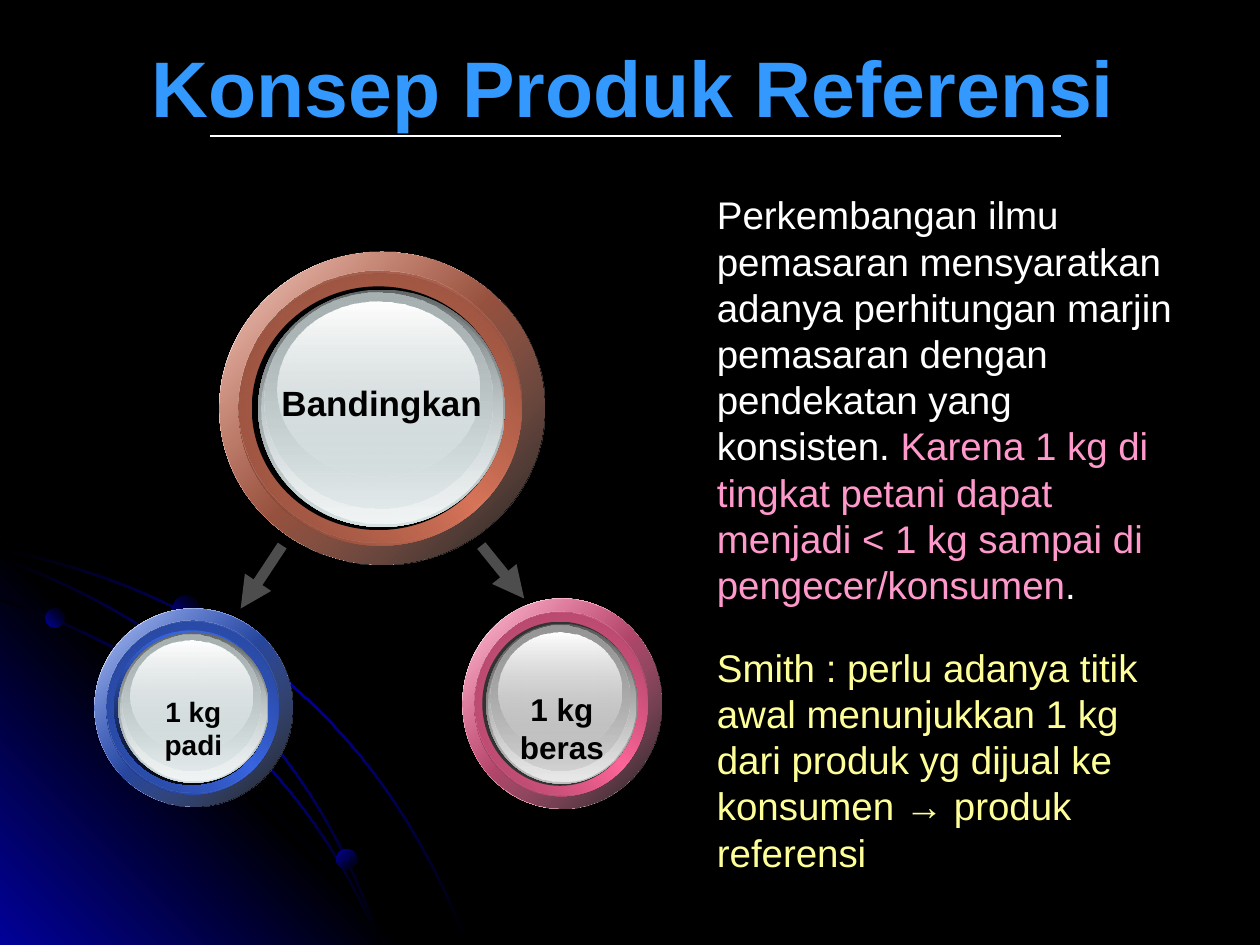
"""Build the slide on the reference product concept."""
from pptx import Presentation
from pptx.dml.color import RGBColor
from pptx.enum.shapes import MSO_CONNECTOR, MSO_SHAPE
from pptx.enum.text import MSO_ANCHOR, PP_ALIGN
from pptx.oxml import parse_xml
from pptx.oxml.ns import nsdecls, qn
from pptx.util import Inches, Pt

OVAL = MSO_SHAPE.OVAL
STRAIGHT = MSO_CONNECTOR.STRAIGHT
CENTER, LEFT = PP_ALIGN.CENTER, PP_ALIGN.LEFT
TOP, MIDDLE = MSO_ANCHOR.TOP, MSO_ANCHOR.MIDDLE

BLACK = RGBColor(0, 0, 0)
WHITE = RGBColor(255, 255, 255)
NAVY = RGBColor(0x01, 0x01, 0x99)
SKY = RGBColor(0x33, 0x99, 0xFF)
PINK = RGBColor(0xFF, 0x99, 0xCC)
YELLOW = RGBColor(0xFF, 0xFF, 0x99)
COPPER = RGBColor(0xD8, 0x75, 0x5A)
ROSE = RGBColor(0xFF, 0x66, 0x99)
BLUE = RGBColor(0x39, 0x65, 0xE1)
ICE = RGBColor(0xD6, 0xE1, 0xE2)
SILVER = RGBColor(0xC0, 0xC0, 0xC0)
CHARCOAL = RGBColor(0x33, 0x33, 0x33)
GRAY = RGBColor(0x4D, 0x4D, 0x4D)
INK = RGBColor(0x03, 0x06, 0x0D)

FONT = "Arial"
PAGE_WIDTH, PAGE_HEIGHT = 10, 7.5
TRAIL_STEPS, TRAIL_THICKNESS = 24, 0.02

TITLE = "Konsep Produk Referensi"
BODY = [
    [("Perkembangan ilmu pemasaran mensyaratkan adanya perhitungan marjin "
      "pemasaran dengan pendekatan yang konsisten. ", WHITE),
     ("Karena 1 kg di tingkat petani dapat menjadi < 1 kg sampai di "
      "pengecer/konsumen", PINK),
     (".", WHITE)],
    [("Smith : perlu adanya titik awal menunjukkan 1 kg dari produk yg dijual "
      "ke konsumen → produk referensi", YELLOW)],
]
ORBS = [
    {"lines": ["Bandingkan"], "size": 20, "label_top": 2.98,
     "bounds": (1.74, 2, 2.58, 2.48), "rim": COPPER, "glass": ICE,
     "core": (BLACK, BLACK)},
    {"lines": ["1 kg", "beras"], "size": 18, "label_top": 5.43,
     "bounds": (3.67, 4.75, 1.58, 1.67), "rim": ROSE, "glass": SILVER,
     "core": (CHARCOAL, CHARCOAL)},
    {"lines": ["1 kg", "padi"], "size": 16, "label_top": 5.46,
     "bounds": (0.75, 4.83, 1.57, 1.57), "rim": BLUE, "glass": ICE,
     "core": (BLUE, INK)},
]
ARROWS = [(2.24, 4.33, 1.91, 4.83), (3.82, 4.33, 4.16, 4.75)]
TITLE_RULE = (1.67, 1.08, 8.42, 1.08)

GLOW_CORNER = [(0, 4.27), (3.22, 7.5), (0, 7.5)]
OUTER_TRAIL = [(0, 4.35), (2.72, 4.89), (3.72, 7.5)]
INNER_TRAIL = [(0, 4.75), (2.18, 5.46), (3.03, 7.5)]
MIDDLE_TRAIL = [(0, 4.42), (2.3, 5.24), (3.03, 7.5)]
BEADS = [(0.36, 4.83, 0.15, 315), (2.67, 6.74, 0.16, 45), (1.37, 4.73, 0.21, 315)]


def blend(color, target, share):
    """Move a colour towards a target by the given share."""
    return RGBColor(*(round(a + (b - a) * share) for a, b in zip(color, target)))


def orb_layers(rim, glass, core):
    """List each layer as left, top, width, height shares, gradient stops and angle."""
    shadow = blend(rim, BLACK, 0.46)
    outer_edge = (0, 0, 1, 1), [(0, WHITE), (50, rim), (100, WHITE)], 45
    outer_shade = (0, 0, 1, 1), [(0, rim, 32), (100, BLACK, 90)], 45
    inner_edge = (0.06, 0.07, 0.87, 0.87), [(0, shadow), (50, rim), (100, shadow)], 315
    inner_shade = ((0.06, 0.06, 0.87, 0.87),
                   [(0, blend(rim, BLACK, 0.36)), (100, rim, 0)], 45)
    well = (0.1, 0.11, 0.78, 0.78), [(0, core[0]), (100, core[1])], 90
    glass_edge = ((0.12, 0.12, 0.76, 0.76),
                  [(0, blend(glass, BLACK, 0.54)), (100, glass)], 90)
    glass_base = ((0.13, 0.13, 0.74, 0.74),
                  [(0, glass, 0), (100, blend(glass, WHITE, 0.65))], 90)
    glass_shade = ((0.14, 0.13, 0.7, 0.69),
                   [(0, blend(glass, BLACK, 0.21)), (100, glass, 48)], 90)
    highlight = (0.18, 0.16, 0.62, 0.56), [(0, WHITE), (100, glass, 38)], 90
    return [outer_edge, outer_shade, inner_edge, inner_shade, well,
            glass_edge, glass_base, glass_shade, highlight]


def paint(shape, stops, angle):
    """Give a shape a linear gradient without outline or shadow."""
    shape.shadow.inherit = False
    shape.line.fill.background()
    shape.fill.background()
    marks = "".join(
        f'<a:gs pos="{place * 1000}"><a:srgbClr val="{color}">'
        f'<a:alpha val="{(alpha or [100])[0] * 1000}"/></a:srgbClr></a:gs>'
        for place, color, *alpha in stops)
    gradient = parse_xml(
        f'<a:gradFill {nsdecls("a")} rotWithShape="1"><a:gsLst>{marks}</a:gsLst>'
        f'<a:lin ang="{angle * 60000}" scaled="1"/></a:gradFill>')
    properties = shape.element.spPr
    properties.replace(properties.find(qn("a:noFill")), gradient)


def add_oval(page, bounds, stops, angle):
    """Add an ellipse with a gradient."""
    paint(page.shapes.add_shape(OVAL, *map(Inches, bounds)), stops, angle)


def add_outline(page, points, stops, angle):
    """Add a closed outline with a gradient."""
    corners = [(Inches(x), Inches(y)) for x, y in points]
    builder = page.shapes.build_freeform(*corners[0])
    builder.add_line_segments(corners[1:], close=True)
    paint(builder.convert_to_shape(), stops, angle)


def trail_outline(start, bend, end):
    """Trace a thin band along a quadratic curve, out and back."""
    upper, lower = [], []
    for step in range(TRAIL_STEPS + 1):
        t = step / TRAIL_STEPS
        x, y = ((1 - t) ** 2 * a + 2 * t * (1 - t) * b + t ** 2 * c
                for a, b, c in zip(start, bend, end))
        upper.append((x, y))
        lower.append((x - TRAIL_THICKNESS * t, y + TRAIL_THICKNESS * (1 - t)))
    return upper + lower[::-1]


def add_text(page, bounds, paragraphs, size, bold=False, align=CENTER,
             anchor=TOP, wrap=True):
    """Add a text box whose paragraphs are lists of text and colour."""
    frame = page.shapes.add_textbox(*map(Inches, bounds)).text_frame
    frame.word_wrap = wrap
    frame.vertical_anchor = anchor
    for index, spans in enumerate(paragraphs):
        para = frame.add_paragraph() if index else frame.paragraphs[0]
        para.alignment = align
        for text, color in spans:
            span = para.add_run()
            span.text = text
            span.font.name, span.font.size, span.font.bold = FONT, Pt(size), bold
            span.font.color.rgb = color
    return frame


def add_line(page, ends, color, width, arrow=False):
    """Add a straight line, optionally with an arrowhead at its end."""
    connector = page.shapes.add_connector(STRAIGHT, *map(Inches, ends))
    connector.line.color.rgb = color
    connector.line.width = Pt(width)
    properties = connector.element.spPr
    if arrow:
        properties.find(qn("a:ln")).append(
            parse_xml(f'<a:tailEnd {nsdecls("a")} type="triangle"/>'))
    properties.append(parse_xml(f'<a:effectLst {nsdecls("a")}/>'))


def add_orb(page, orb):
    """Add a glossy ringed ball with its label."""
    left, top, width, height = orb["bounds"]
    for (x, y, w, h), stops, angle in orb_layers(orb["rim"], orb["glass"], orb["core"]):
        bounds = (left + x * width, top + y * height, w * width, h * height)
        add_oval(page, bounds, stops, angle)
    label_height = 0.1 + len(orb["lines"]) * orb["size"] * 1.15 / 72
    add_text(page, (left, orb["label_top"], width, label_height),
             [[(line, BLACK)] for line in orb["lines"]], orb["size"],
             bold=True, wrap=False)


def add_backdrop(page):
    """Add the corner glow, the curved trails and their beads."""
    page.background.fill.solid()
    page.background.fill.fore_color.rgb = BLACK
    add_outline(page, GLOW_CORNER, [(0, NAVY), (50, BLACK), (100, NAVY)], 315)
    for trail in (OUTER_TRAIL, INNER_TRAIL, MIDDLE_TRAIL):
        add_outline(page, trail_outline(*trail),
                    [(0, BLACK), (50, NAVY), (100, BLACK)], 45)
    for left, top, size, angle in BEADS:
        add_oval(page, (left, top, size, size), [(0, NAVY), (100, BLACK)], angle)


def main():
    """Assemble and save the deck."""
    deck = Presentation()
    deck.slide_width, deck.slide_height = Inches(PAGE_WIDTH), Inches(PAGE_HEIGHT)
    page = deck.slides.add_slide(deck.slide_layouts[6])
    add_backdrop(page)
    title = add_text(page, (0.5, 0, 9, 1.37), [[(TITLE, SKY)]], 45, True, anchor=MIDDLE)
    title.margin_right = Inches(0.05)
    body = add_text(page, (5.5, 1.42, 4, 5.5), BODY, 22, align=LEFT)
    body.margin_left, body.margin_top = Inches(0.19), Inches(0.1)
    body.paragraphs[1].space_before = Pt(21)
    for orb in ORBS:
        add_orb(page, orb)
    for ends in ARROWS:
        add_line(page, ends, GRAY, 6, arrow=True)
    add_line(page, TITLE_RULE, WHITE, 0.75)
    deck.save("out.pptx")


if __name__ == "__main__":
    main()
